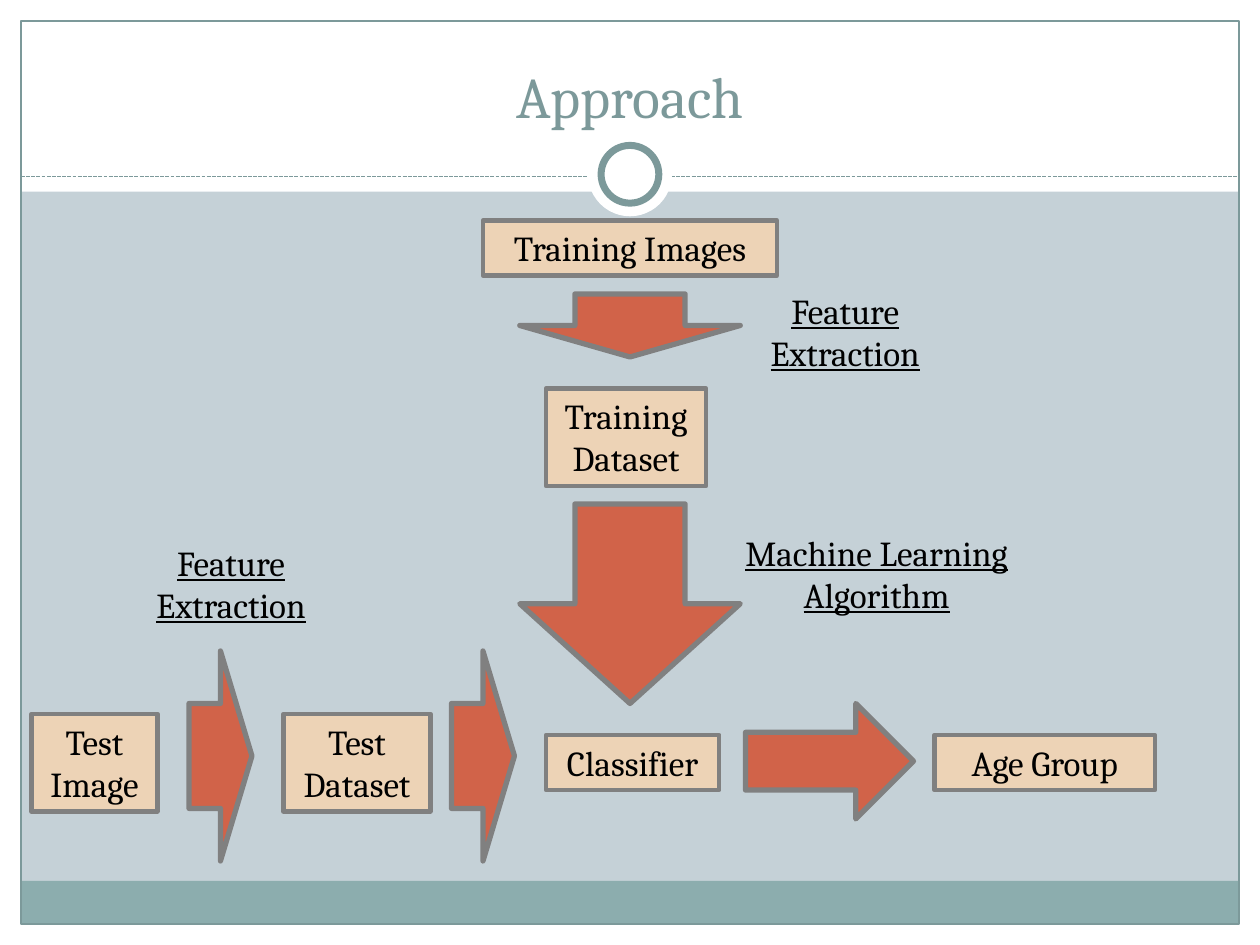
from pptx import Presentation
from pptx.dml.color import RGBColor
from pptx.enum import dml, shapes, text
from pptx import util as u
from lxml import etree

FONT = "Cambria"
WHITE, TEAL, BAND, SKY = "FFFFFF", "7C999A", "8CADAE", "C5D1D7"
SAND, RUST, GRAY, BLACK = "EDD3B6", "D16349", "808080", "000000"
SHAPE = shapes.MSO_SHAPE
ANCHOR = text.MSO_ANCHOR
COLUMNS, ROWS = 120, 90
ONE_LINE, TWO_LINES = 5.25, 9.29


def color(value):
    return RGBColor.from_string(value)


class FlowPage:
    def __init__(self, deck):
        self.cell = deck.slide_width / COLUMNS
        self.page = deck.slides.add_slide(deck.slide_layouts[6])
        background = self.page.background.fill
        background.solid()
        background.fore_color.rgb = color(SKY)

    def lengths(self, *cells):
        return [round(cell * self.cell) for cell in cells]

    def shape(self, kind, area, fill=None, line=None, weight=0.75):
        item = self.page.shapes.add_shape(kind, *self.lengths(*area))
        item.shadow.inherit = False
        if fill:
            item.fill.solid()
            item.fill.fore_color.rgb = color(fill)
        else:
            item.fill.background()
        if line:
            item.line.color.rgb = color(line)
            item.line.width = u.Pt(weight)
        else:
            item.line.fill.background()
        return item

    def set_text(self, item, words, size=20, ink=BLACK, underline=None,
                 anchor=ANCHOR.TOP, fit=text.MSO_AUTO_SIZE.SHAPE_TO_FIT_TEXT):
        frame = item.text_frame
        frame.word_wrap = True
        frame.auto_size = fit
        frame.vertical_anchor = anchor
        para = frame.paragraphs[0]
        para.text = words
        para.alignment = text.PP_ALIGN.CENTER
        para.font.name = FONT
        para.font.size = u.Pt(size)
        para.font.color.rgb = color(ink)
        para.font.underline = underline

    def box(self, words, left, top, width, height):
        item = self.shape(SHAPE.RECTANGLE, (left, top, width, height), SAND, GRAY, 2.5)
        self.set_text(item, words)

    def arrow(self, kind, *area):
        self.shape(kind, area, RUST, GRAY, 3)

    def label(self, words, left, top, width):
        item = self.page.shapes.add_textbox(*self.lengths(left, top, width, TWO_LINES))
        self.set_text(item, words, underline=True)

    def title(self, words):
        item = self.page.shapes.add_textbox(*self.lengths(4, 3, 112, 10))
        self.set_text(item, words, 33, TEAL, anchor=ANCHOR.BOTTOM,
                      fit=text.MSO_AUTO_SIZE.NONE)

    def divider(self, left, right, row):
        rule = self.page.shapes.add_connector(
            shapes.MSO_CONNECTOR.STRAIGHT, *self.lengths(left, row, right, row))
        rule.line.color.rgb = color(TEAL)
        rule.line.width = u.Pt(0.75)
        rule.line.dash_style = dml.MSO_LINE.SQUARE_DOT
        properties = rule._element.spPr
        namespace = properties.nsmap["a"]
        etree.SubElement(properties, f"{{{namespace}}}effectLst")

    def frame(self):
        margin = 2
        inner = COLUMNS - 2 * margin
        for area in ((0, ROWS - margin, COLUMNS, margin),
                     (0, 0, COLUMNS, 18.25),
                     (0, 0, margin, ROWS),
                     (COLUMNS - margin, 0, margin, ROWS)):
            self.shape(SHAPE.RECTANGLE, area, WHITE)
        self.shape(SHAPE.RECTANGLE, (margin, 83.9, inner, 4.1), BAND)
        self.shape(SHAPE.RECTANGLE, (margin, margin, inner, ROWS - 2 * margin), line=TEAL)
        self.divider(margin, COLUMNS - margin, 16.8)
        for size, line in ((8, None), (5.5, TEAL)):
            area = (COLUMNS / 2 - size / 2, 16.6 - size / 2, size, size)
            self.shape(SHAPE.OVAL, area, WHITE, line, 4)


def main():
    deck = Presentation()
    deck.slide_width, deck.slide_height = u.Inches(10), u.Inches(7.5)
    page = FlowPage(deck)
    page.frame()
    page.title("Approach")

    for box in (("Test Image", 3, 68, 12, TWO_LINES),
                ("Training Images", 46, 21, 28, ONE_LINE),
                ("Training Dataset", 52, 37, 15.25, TWO_LINES),
                ("Test Dataset", 27, 68, 14, TWO_LINES),
                ("Classifier", 52, 70, 16.5, ONE_LINE),
                ("Age Group", 89, 70, 21, ONE_LINE)):
        page.box(*box)

    for top, height in ((28, 6), (48, 19)):
        page.arrow(SHAPE.DOWN_ARROW, 49.5, top, 21, height)
    for area in ((18, 62, 6, 20), (43, 62, 6, 20), (71, 67, 16, 11)):
        page.arrow(SHAPE.RIGHT_ARROW, *area)

    page.label("Feature Extraction", 71, 27, 19)
    page.label("Feature Extraction", 12, 51, 20)
    page.label("Machine Learning Algorithm", 68, 50, 31)
    deck.save("out.pptx")


if __name__ == "__main__":
    main()
